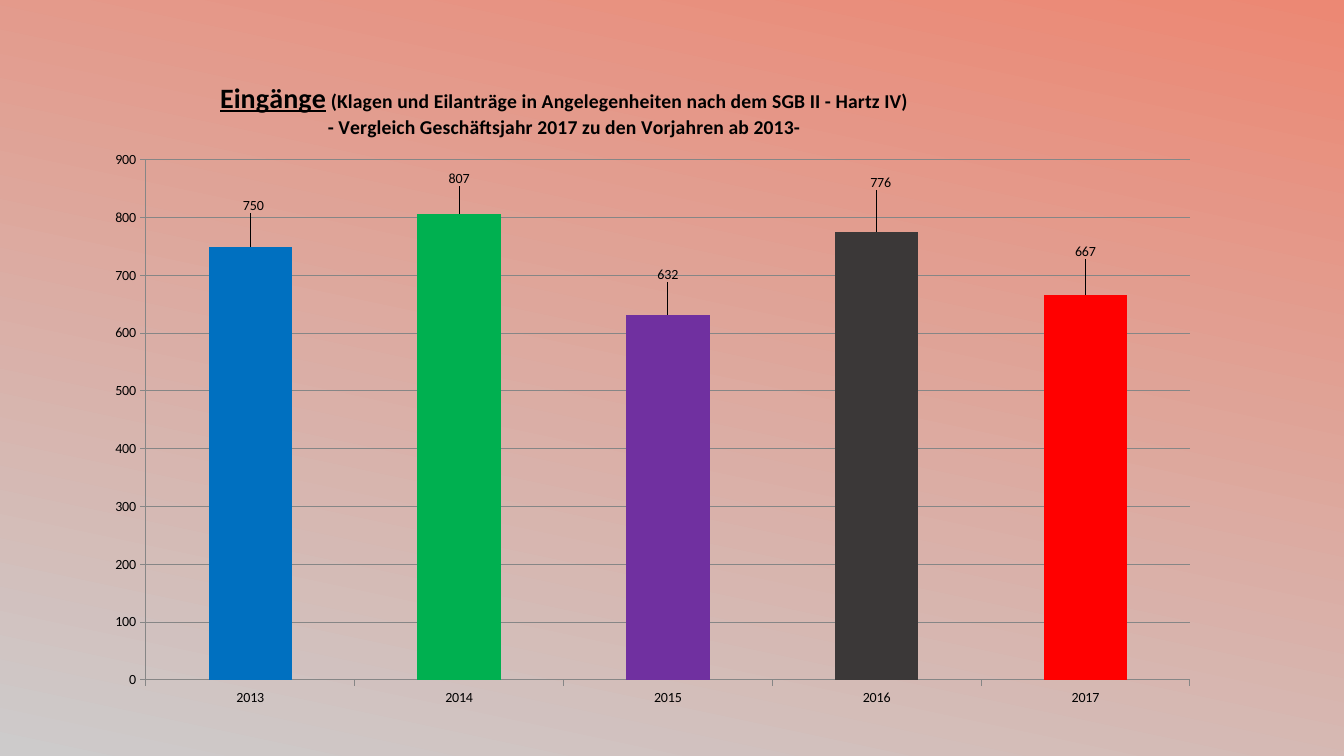
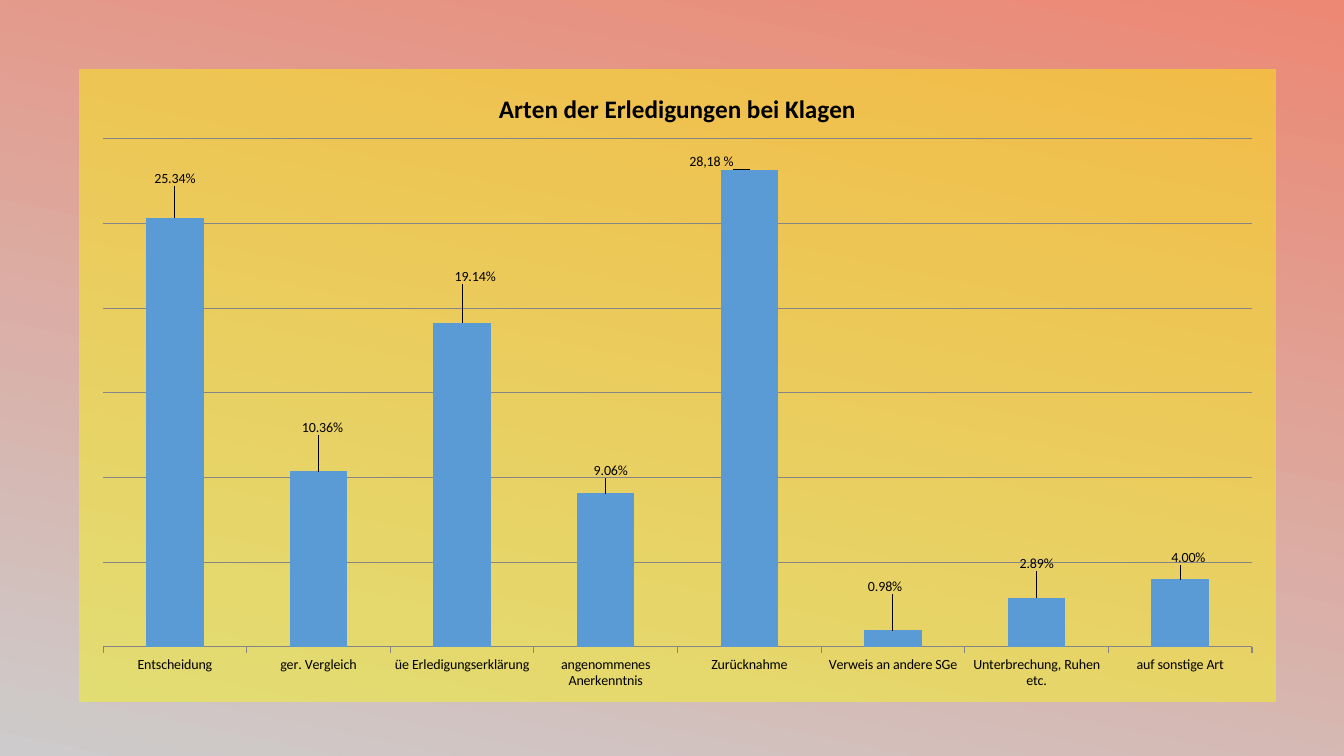
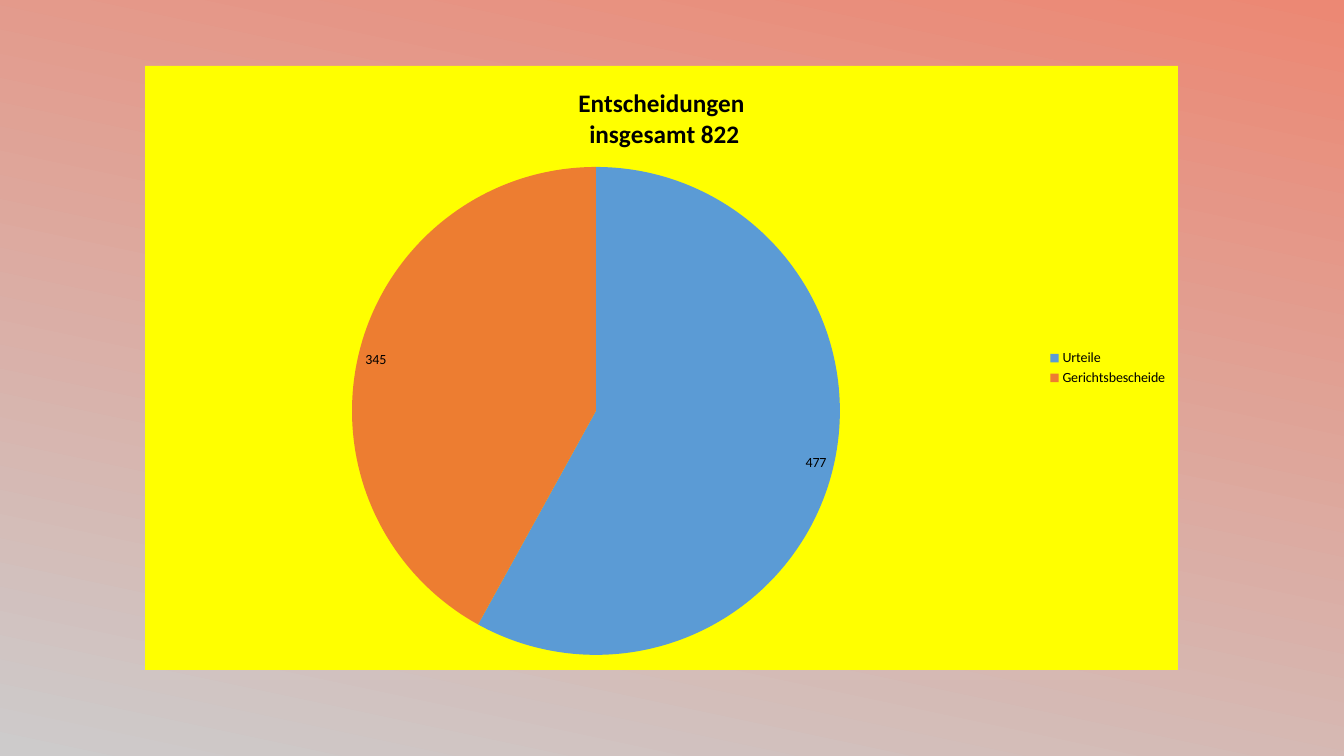
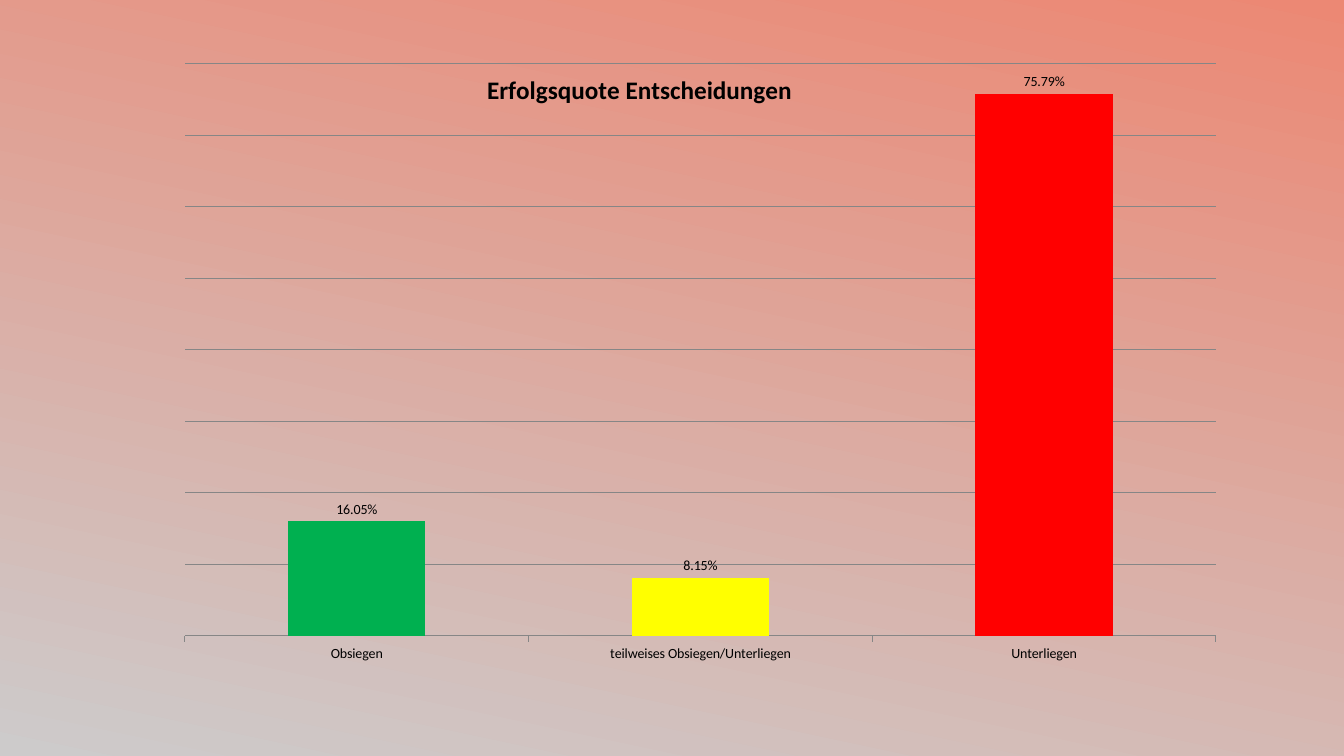
"""Build four chart slides on a court's yearly statistics."""
from lxml.etree import SubElement
from pptx import Presentation
from pptx.chart.data import CategoryChartData
from pptx.dml.color import RGBColor
from pptx.enum.chart import XL_CHART_TYPE as CT, XL_LABEL_POSITION as LP
from pptx.enum.chart import XL_LEGEND_POSITION as LEG, XL_TICK_MARK as TICK
from pptx.oxml import parse_xml
from pptx.oxml.ns import nsdecls, qn
from pptx.util import Emu, Pt

PX = 914400 / 100.8
FONT = "Calibri"
BLUE, ORANGE, GREEN, RED, YELLOW = "5B9BD5", "ED7D31", "00B050", "FF0000", "FFFF00"
GRID = "868686"
rgb = RGBColor.from_string


def add_run(p, text, size=18, bold=True, underline=None):
    r = p.add_run()
    r.text = text
    r.font.name, r.font.size = FONT, Pt(size)
    r.font.bold, r.font.underline = bold, underline
    r.font.color.rgb = rgb("000000")


def set_layout(parent, index, **values):
    for old in parent.findall(qn("c:layout")):
        parent.remove(old)
    layout = parse_xml(f"<c:layout {nsdecls('c')}/>")
    manual = SubElement(layout, qn("c:manualLayout"))
    for name, value in values.items():
        SubElement(manual, qn(f"c:{name}")).set("val", str(value))
    parent.insert(index, layout)


charts = [
    dict(kind=CT.COLUMN_CLUSTERED, box=(93, 51, 1120, 667), plot=(146, 160, 1044, 520),
         title=[[("Eingänge", dict(size=20, underline=True)),
                 (" (Klagen und Eilanträge in Angelegenheiten nach dem SGB II - Hartz IV)", dict(size=14))],
                [("- Vergleich Geschäftsjahr 2017 zu den Vorjahren ab 2013-", dict(size=14))]],
         title_at=(217, 76), fmt="General", top=900, step=100, show_axis=True,
         cats=["2013", "2014", "2015", "2016", "2017"], vals=[750, 807, 632, 776, 667],
         colors=["0070C0", GREEN, "7030A0", "3B3838", RED],
         shifts=[(3, -29), (0, -23), (0, -28), (4, -37), (0, -31)]),
    dict(kind=CT.COLUMN_CLUSTERED, box=(79, 69, 1197, 633), plot=(103, 139, 1149, 508),
         title=[[("Arten der Erledigungen bei Klagen", {})]],
         fill=YELLOW, alpha=41, fmt="0.00%", top=0.3, step=0.05,
         cats=["Entscheidung", "ger. Vergleich", "üe Erledigungserklärung",
               "angenommenes Anerkenntnis", "Zurücknahme", "Verweis an andere SGe",
               "Unterbrechung, Ruhen etc.", "auf sonstige Art"],
         vals=[0.2534, 0.1036, 0.1914, 0.0906, 0.2818, 0.0098, 0.0289, 0.04],
         colors=[BLUE] * 8, label_texts={4: "28,18 %"},
         shifts=[(0, -27), (4, -32), (13, -34), (5, -11), (-38, 4), (-8, -32), (0, -22), (8, -10)]),
    dict(kind=CT.PIE, box=(145, 66, 1033, 604), plot=(352, 167, 488, 488),
         title=[[("Entscheidungen", {})], [(" insgesamt 822", {})]],
         fill=YELLOW, alpha=100, fmt="General",
         cats=["Urteile", "Gerichtsbescheide"], vals=[477, 345], colors=[BLUE, ORANGE]),
    dict(kind=CT.COLUMN_CLUSTERED, box=(56, 49, 1167, 675), plot=(185, 64, 1031, 572),
         title=[[("Erfolgsquote Entscheidungen", {})]],
         fmt="0.00%", top=0.8, step=0.1,
         cats=["Obsiegen", "teilweises Obsiegen/Unterliegen", "Unterliegen"],
         vals=[0.1605, 0.0815, 0.7579], colors=[GREEN, YELLOW, RED]),
]

prs = Presentation()
prs.slide_width, prs.slide_height = Emu(12192000), Emu(6858000)

background = prs.slide_master.background.fill
background.gradient()
background.gradient_angle = 258
for stop, color in zip(background.gradient_stops, ["EC8874", "CDCBCB"]):
    stop.color.rgb = rgb(color)

for c in charts:
    s = prs.slides.add_slide(prs.slide_layouts[6])
    data = CategoryChartData(number_format=c["fmt"])
    data.categories = c["cats"]
    data.add_series("Series 1", c["vals"])
    left, top, width, height = c["box"]
    frame = s.shapes.add_chart(c["kind"], *(Emu(int(v * PX)) for v in c["box"]), data)
    chart = frame.chart
    is_pie = c["kind"] == CT.PIE
    chart.font.name, chart.font.size = FONT, Pt(10)
    chart.font.color.rgb = rgb("000000")

    paint = "<a:noFill/>"
    if "fill" in c:
        paint = (f'<a:solidFill><a:srgbClr val="{c["fill"]}"><a:alpha val="{c["alpha"] * 1000}"/>'
                 "</a:srgbClr></a:solidFill>")
    chart.element.find(qn("c:chart")).addnext(parse_xml(
        f"<c:spPr {nsdecls('c', 'a')}>{paint}<a:ln><a:noFill/></a:ln></c:spPr>"))

    tf = chart.chart_title.text_frame
    for i, line in enumerate(c["title"]):
        p = tf.add_paragraph() if i else tf.paragraphs[0]
        for text, style in line:
            add_run(p, text, **style)
    if "title_at" in c:
        x, y = c["title_at"]
        set_layout(chart.element.xpath("c:chart/c:title")[0], 1, xMode="edge", yMode="edge",
                   x=round((x - left) / width, 4), y=round((y - top) / height, 4))

    x, y, w, h = c["plot"]
    set_layout(chart.element.xpath("c:chart/c:plotArea")[0], 0,
               layoutTarget="inner", xMode="edge", yMode="edge",
               x=round((x - left) / width, 4), y=round((y - top) / height, 4),
               w=round(w / width, 4), h=round(h / height, 4))

    plot = chart.plots[0]
    plot.vary_by_categories = is_pie
    chart.has_legend = is_pie
    if is_pie:
        chart.legend.position = LEG.RIGHT
        chart.legend.include_in_layout = False
    else:
        plot.gap_width = 150
        axis = chart.value_axis
        axis.minimum_scale, axis.maximum_scale, axis.major_unit = 0, c["top"], c["step"]
        axis.visible = c.get("show_axis", False)
        axis.major_tick_mark = chart.category_axis.major_tick_mark = TICK.OUTSIDE
        for item in (axis.major_gridlines, axis, chart.category_axis):
            item.format.line.color.rgb = rgb(GRID)
            item.format.line.width = Pt(0.75)

    series = plot.series[0]
    for i, color in enumerate(c["colors"]):
        fill = series.points[i].format.fill
        fill.solid()
        fill.fore_color.rgb = rgb(color)

    labels = series.data_labels
    labels.show_value = True
    labels.number_format, labels.number_format_is_linked = c["fmt"], False
    labels.position = LP.INSIDE_END if is_pie else LP.OUTSIDE_END
    for i, (dx, dy) in enumerate(c.get("shifts", [])):
        label = series.points[i].data_label
        if i in c.get("label_texts", {}):
            add_run(label.text_frame.paragraphs[0], c["label_texts"][i], size=10, bold=False)
        label.position = LP.OUTSIDE_END
        set_layout(chart.element.xpath(".//c:dLbl")[i], 1,
                   x=round(dx / width, 4), y=round(dy / height, 4))

prs.save("out.pptx")
